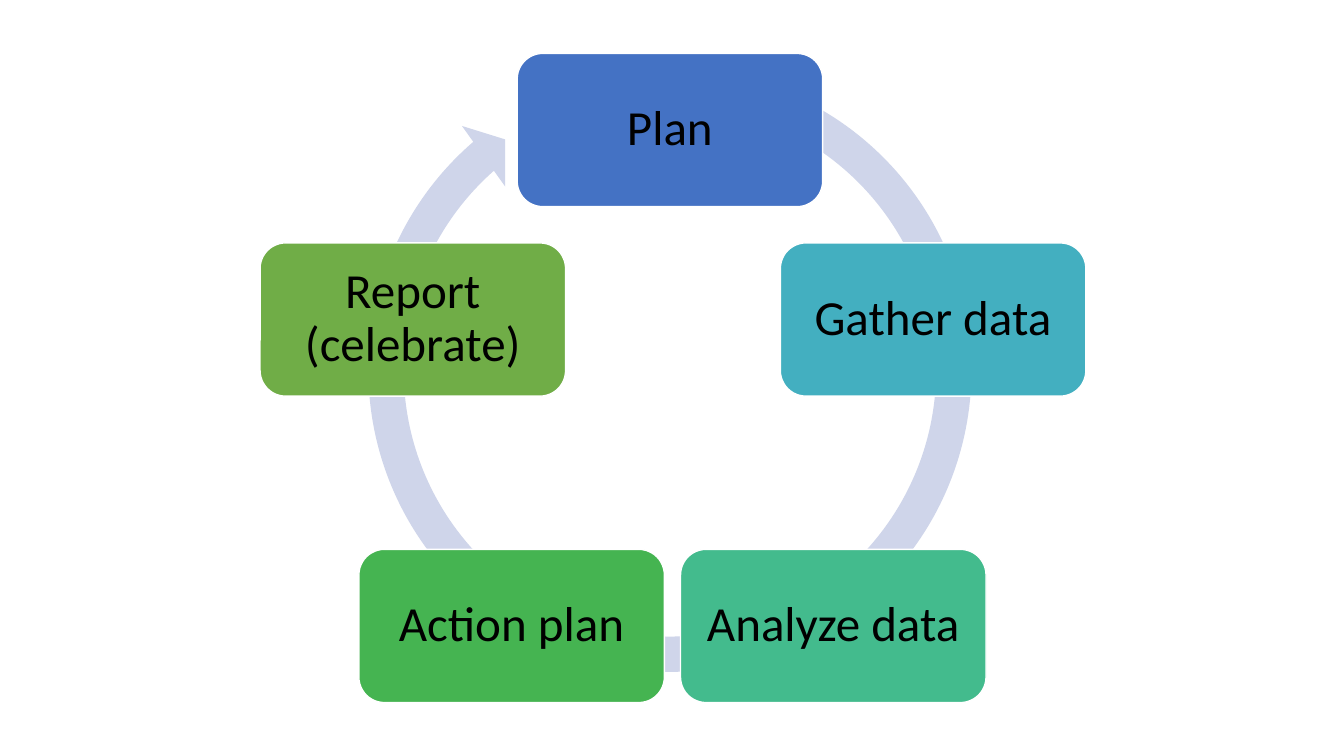
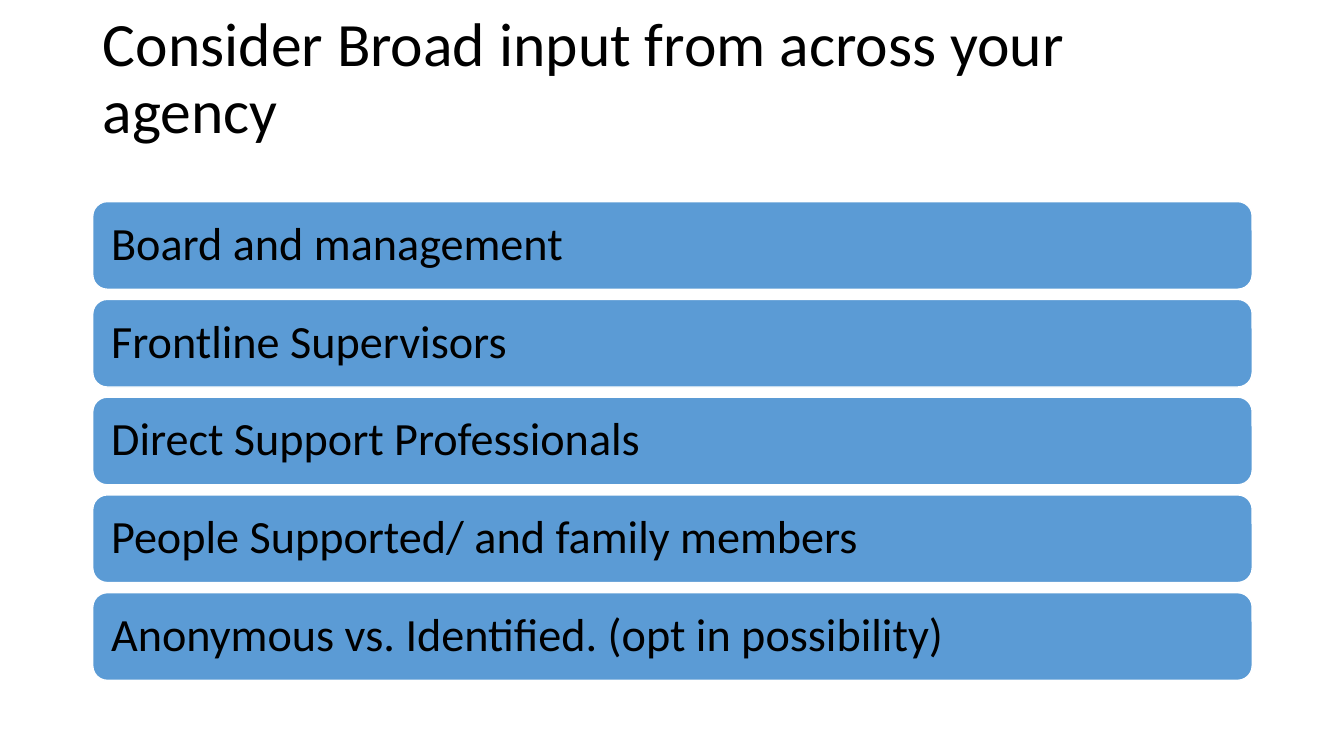
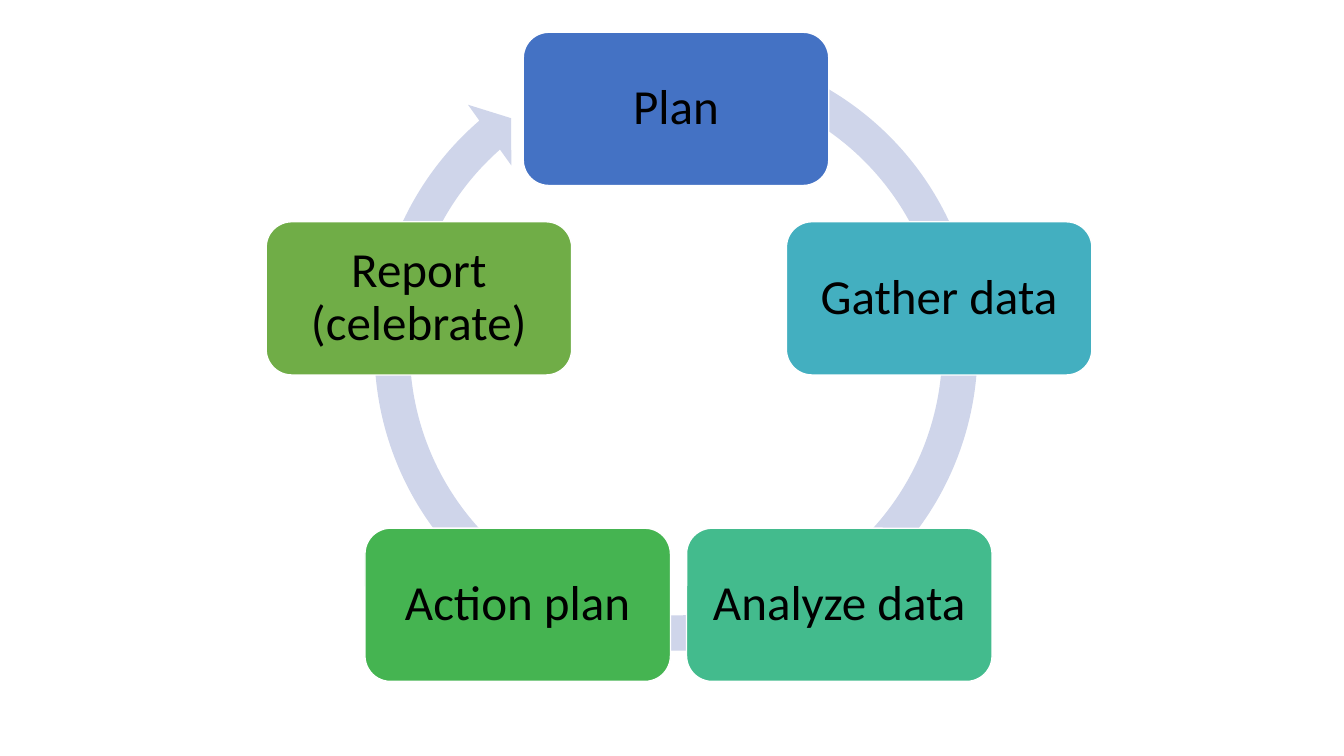
from pptx import Presentation
from pptx.dml.color import RGBColor
from pptx.enum.shapes import MSO_SHAPE
from pptx.enum.text import MSO_ANCHOR, MSO_AUTO_SIZE, PP_ALIGN
from pptx.util import Inches, Pt

FONT = "Calibri"
BLACK = "000000"
WHITE = "FFFFFF"
RING_COLOUR = "CFD5EA"
BAR_COLOUR = "5B9BD5"
TITLE_ONLY, BLANK = 5, 6

RING_SIZE = 6.37
RING_ADJUSTMENTS = (0.055, 3.307, 137.387, 174.087, 0.058)
STEP_WIDTH, STEP_HEIGHT = 3.03, 1.52
STEPS = (
    ("Plan", "4472C4", 1.67, 0.04),
    ("Gather data", "43AFC0", 4.28, 1.92),
    ("Analyze data", "43BB8D", 3.29, 4.96),
    ("Action plan", "45B451", 0.1, 4.96),
    ("Report (celebrate)", "70AD47", -0.88, 1.92),
)

BAR_LEFT, BAR_TOP, BAR_WIDTH, BAR_HEIGHT = 0.92, 2, 11.5, 0.87
BAR_PITCH = 0.97
AUDIENCES = (
    "Board and management",
    "Frontline Supervisors",
    "Direct Support Professionals",
    "People Supported/ and family members",
    "Anonymous vs. Identified. (opt in possibility)",
)


def colour(value):
    """Turn a hex string into a colour."""
    return RGBColor.from_string(value)


def write_text(box, text, size, align):
    """Write one vertically centred paragraph in the shared text style."""
    frame = box.text_frame
    frame.text = text
    frame.word_wrap = True
    frame.auto_size = MSO_AUTO_SIZE.NONE
    frame.vertical_anchor = MSO_ANCHOR.MIDDLE
    para = frame.paragraphs[0]
    para.alignment = align
    para.line_spacing = 0.9
    para.font.name = FONT
    para.font.size = Pt(size)
    para.font.color.rgb = colour(BLACK)


def add_filled_shape(page, kind, bounds, fill):
    """Add a flat preset shape without an outline."""
    shape = page.shapes.add_shape(kind, *map(Inches, bounds))
    shape.shadow.inherit = False
    shape.fill.solid()
    shape.fill.fore_color.rgb = colour(fill)
    shape.line.fill.background()
    return shape


def add_card(page, bounds, fill, text, size, align, margin):
    """Add a rounded card with a white outline and a label."""
    card = add_filled_shape(page, MSO_SHAPE.ROUNDED_RECTANGLE, bounds, fill)
    card.line.color.rgb = colour(WHITE)
    card.line.width = Pt(1)
    frame = card.text_frame
    frame.margin_left = frame.margin_right = Inches(margin)
    frame.margin_top = frame.margin_bottom = Inches(margin)
    write_text(card, text, size, align)


def add_title(page, text):
    """Place the title so that its lines sit high in the placeholder."""
    title = page.shapes.title
    title.left, title.top = Inches(0.92), Inches(0.4)
    title.width, title.height = Inches(11.5), Inches(1.45)
    title.text_frame.margin_bottom = Inches(0.71)
    write_text(title, text, 44, PP_ALIGN.LEFT)


def add_cycle_page(deck, left, top):
    """Add a page with the five-step cycle around a ring arrow."""
    page = deck.slides.add_slide(deck.slide_layouts[BLANK])
    ring = add_filled_shape(page, MSO_SHAPE.CIRCULAR_ARROW,
                            (left, top, RING_SIZE, RING_SIZE), RING_COLOUR)
    for index, value in enumerate(RING_ADJUSTMENTS):
        ring.adjustments[index] = value
    for text, fill, across, down in STEPS:
        bounds = (left + across, top + down, STEP_WIDTH, STEP_HEIGHT)
        add_card(page, bounds, fill, text, 35, PP_ALIGN.CENTER, 0.15)


def add_audience_page(deck):
    """Add the page that stacks the sources of input as bars."""
    page = deck.slides.add_slide(deck.slide_layouts[TITLE_ONLY])
    add_title(page, "Consider Broad input from across your agency")
    for row, text in enumerate(AUDIENCES):
        bounds = (BAR_LEFT, BAR_TOP + row * BAR_PITCH, BAR_WIDTH, BAR_HEIGHT)
        add_card(page, bounds, BAR_COLOUR, text, 33, PP_ALIGN.LEFT, 0.14)


def main():
    """Build and save the deck."""
    deck = Presentation()
    deck.slide_width, deck.slide_height = Inches(13.33), Inches(7.5)
    add_cycle_page(deck, 3.46, 0.49)
    add_audience_page(deck)
    add_cycle_page(deck, 3.52, 0.28)
    deck.save("out.pptx")


if __name__ == "__main__":
    main()
